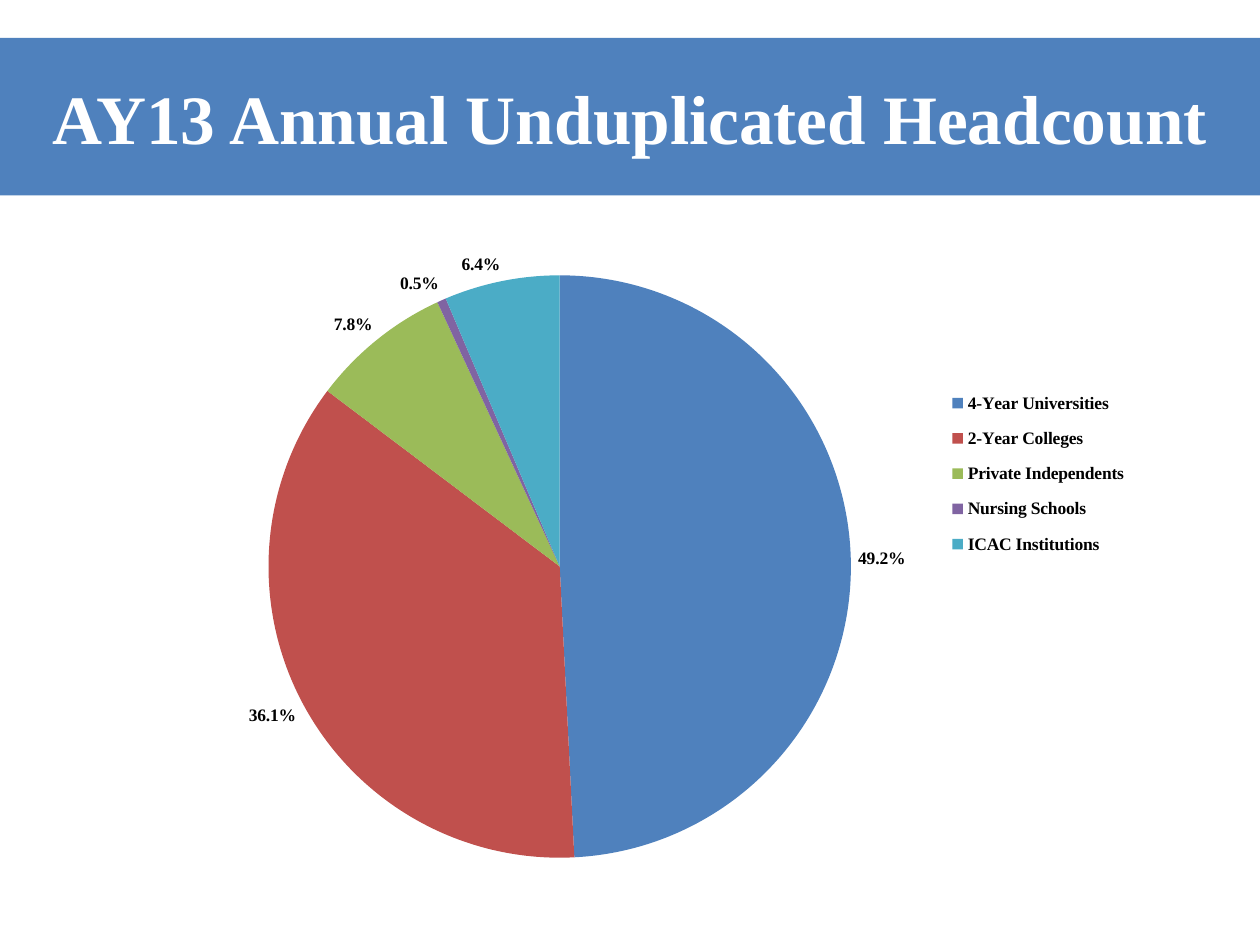
from dataclasses import dataclass

from lxml import etree
from pptx import Presentation
from pptx import util as u
from pptx.chart.data import CategoryChartData
from pptx.dml.color import RGBColor
from pptx.enum import chart as ch, shapes, text
from pptx.oxml.ns import qn


@dataclass(frozen=True)
class Theme:
    font: str = "Times New Roman"
    title_size: float = 39.6
    chart_size: float = 10
    banner: str = "4F81BD"
    light: str = "FFFFFF"
    dark: str = "000000"
    slices: tuple = ("4F81BD", "C0504D", "9BBB59", "8064A2", "4BACC6")


THEME = Theme()
HEADCOUNT = {
    "4-Year Universities": 49.2,
    "2-Year Colleges": 36.1,
    "Private Independents": 7.8,
    "Nursing Schools": 0.5,
    "ICAC Institutions": 6.4,
}


def style_font(font, size, color):
    font.name = THEME.font
    font.size = u.Pt(size)
    font.bold = True
    font.color.rgb = RGBColor.from_string(color)


def set_layout(element, box, inner=False):
    for old in element.findall(qn("c:layout")):
        element.remove(old)
    layout = etree.Element(qn("c:layout"))
    manual = etree.SubElement(layout, qn("c:manualLayout"))
    settings = [("layoutTarget", "inner")] if inner else []
    settings += [("xMode", "edge"), ("yMode", "edge")]
    settings += zip("xywh", box)
    for tag, value in settings:
        etree.SubElement(manual, qn(f"c:{tag}")).set("val", str(value))
    element.insert(0 if inner else 1, layout)


def add_banner(slide, title, left, top, width, height):
    s = slide.shapes.add_shape(
        shapes.MSO_SHAPE.RECTANGLE, left, top, width, height)
    s.shadow.inherit = False
    s.fill.solid()
    s.fill.fore_color.rgb = RGBColor.from_string(THEME.banner)
    s.line.fill.background()
    tf = s.text_frame
    tf.word_wrap = True
    tf.vertical_anchor = text.MSO_ANCHOR.MIDDLE
    p = tf.paragraphs[0]
    p.alignment = text.PP_ALIGN.CENTER
    r = p.add_run()
    r.text = title
    style_font(r.font, THEME.title_size, THEME.light)


def add_headcount_pie(slide, shares, left, top, width, height):
    data = CategoryChartData(number_format="0.0")
    data.categories = list(shares)
    data.add_series("Series 1", list(shares.values()))
    chart = slide.shapes.add_chart(
        ch.XL_CHART_TYPE.PIE, left, top, width, height, data).chart
    chart.has_title = False
    style_font(chart.font, THEME.chart_size, THEME.dark)

    chart.has_legend = True
    legend = chart.legend
    legend.position = ch.XL_LEGEND_POSITION.RIGHT
    legend.include_in_layout = False
    style_font(legend.font, THEME.chart_size, THEME.dark)

    plot = chart.plots[0]
    plot.vary_by_categories = True
    series = plot.series[0]
    for i, color in enumerate(THEME.slices):
        fill = series.points[i].format.fill
        fill.solid()
        fill.fore_color.rgb = RGBColor.from_string(color)

    labels = series.data_labels
    labels.show_value = False
    labels.show_percentage = True
    labels.number_format = "0.0%"
    labels.number_format_is_linked = False
    labels.position = ch.XL_LABEL_POSITION.OUTSIDE_END
    style_font(labels.font, THEME.chart_size, THEME.dark)

    plot_area = chart.element.find(".//" + qn("c:plotArea"))
    set_layout(plot_area, (0.09, 0.07, 0.6, 0.91), inner=True)
    set_layout(chart.element.find(".//" + qn("c:legend")),
               (0.77, 0.23, 0.22, 0.3))


def main():
    prs = Presentation()
    prs.slide_width = u.Inches(10)
    prs.slide_height = u.Inches(7.5)
    slide = prs.slides.add_slide(prs.slide_layouts[6])
    add_banner(slide, "AY13 Annual Unduplicated Headcount",
               u.Inches(0), u.Inches(0.3), prs.slide_width, u.Inches(1.25))
    add_headcount_pie(slide, HEADCOUNT, u.Inches(1.42), u.Inches(1.83),
                      u.Inches(7.75), u.Inches(5.08))
    prs.save("out.pptx")


if __name__ == "__main__":
    main()
